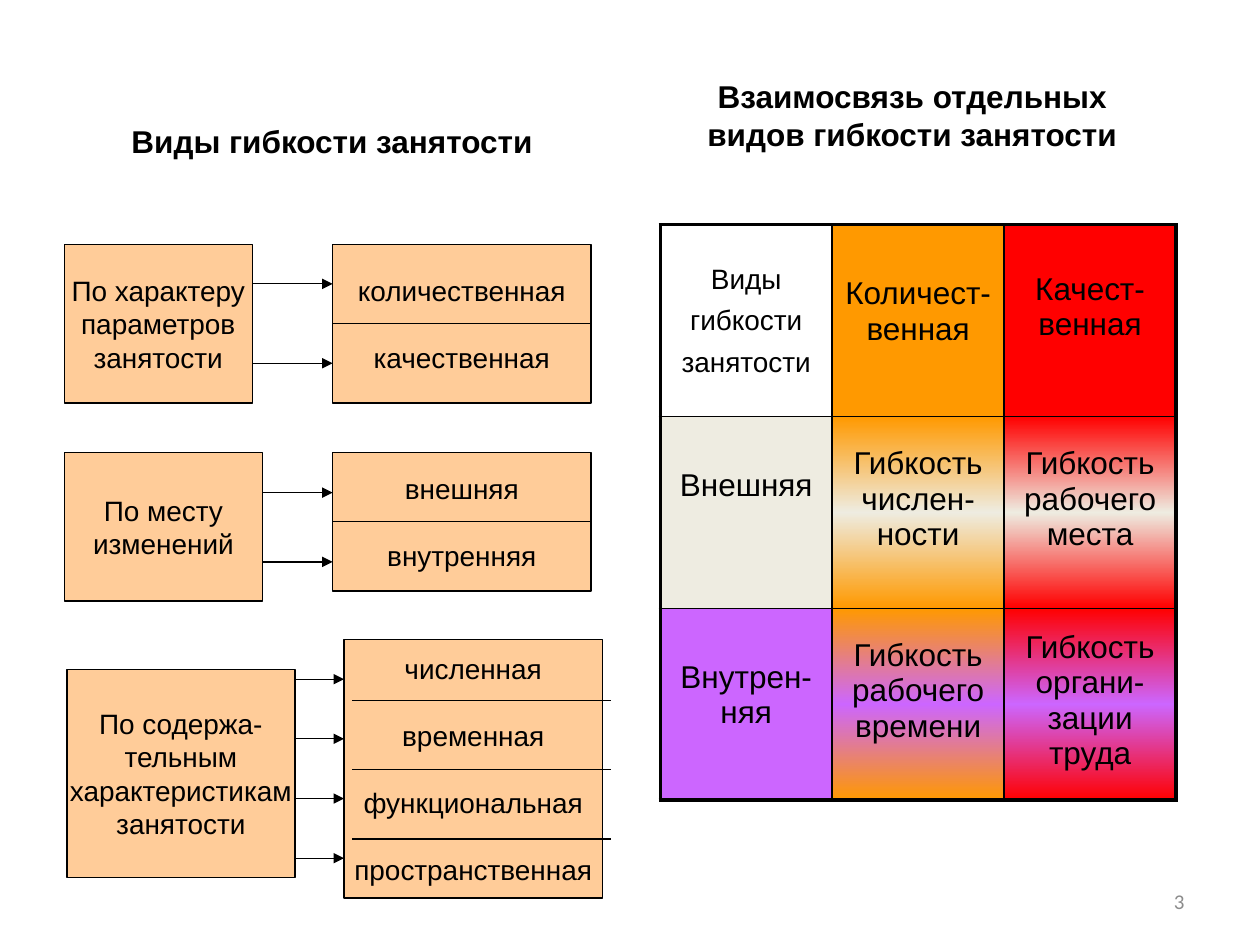
import copy

import pptx
import pptx.dml.color
import pptx.enum.shapes
import pptx.enum.text
import pptx.oxml
import pptx.oxml.ns
import pptx.util

Pt = pptx.util.Pt
RGBColor = pptx.dml.color.RGBColor
ALIGN = pptx.enum.text.PP_ALIGN
ANCHOR = pptx.enum.text.MSO_ANCHOR
qn = pptx.oxml.ns.qn

BLACK = RGBColor(0x00, 0x00, 0x00)
WHITE = RGBColor(0xFF, 0xFF, 0xFF)
GRAY = RGBColor(0x8C, 0x8C, 0x8C)
PEACH = RGBColor(0xFF, 0xCC, 0x99)
ORANGE = RGBColor(0xFF, 0x99, 0x00)
RED = RGBColor(0xFF, 0x00, 0x00)
CREAM = RGBColor(0xEE, 0xEC, 0xE1)
VIOLET = RGBColor(0xCC, 0x66, 0xFF)

BODY = {"size": Pt(16), "name": "Arial", "bold": False}
CELL = {"size": Pt(18), "name": "Arial", "bold": False}
HEADING = {"size": Pt(18), "name": "Arial", "bold": True}
NUMBER = {"size": Pt(12), "name": "Calibri", "bold": False}

LIST_WIDTH = 147.6


def write(tf, lines, font, color=BLACK, align=ALIGN.CENTER, gap=0):
    """Fill a text frame, one paragraph for each line."""
    for i, line in enumerate(lines):
        p = tf.add_paragraph() if i else tf.paragraphs[0]
        p.alignment = align
        p.space_before = Pt(gap if i else 0)
        r = p.add_run()
        r.text = line
        for key, value in font.items():
            setattr(r.font, key, value)
        r.font.color.rgb = color


def add_box(s, box, lines, font, fill=PEACH, line=BLACK, gap=0):
    sp = s.shapes.add_shape(pptx.enum.shapes.MSO_SHAPE.RECTANGLE, *map(Pt, box))
    sp.shadow.inherit = False
    sp.fill.solid()
    sp.fill.fore_color.rgb = fill
    sp.line.color.rgb = line
    sp.line.width = Pt(0.75)
    tf = sp.text_frame
    tf.word_wrap = False
    tf.vertical_anchor = ANCHOR.MIDDLE
    write(tf, lines, font, gap=gap)


def add_line(s, x1, x2, y, arrow=False):
    cn = s.shapes.add_connector(
        pptx.enum.shapes.MSO_CONNECTOR.STRAIGHT, Pt(x1), Pt(y), Pt(x2), Pt(y))
    cn.line.color.rgb = BLACK
    cn.line.width = Pt(0.75)
    if arrow:
        ln = cn.line._get_or_add_ln()
        ln.append(pptx.oxml.parse_xml(
            f'<a:tailEnd {pptx.oxml.ns.nsdecls("a")} type="triangle"/>'))
    cn._element.spPr.append(pptx.oxml.parse_xml(
        f'<a:effectLst {pptx.oxml.ns.nsdecls("a")}/>'))


def add_titles(s, title_box, heading_box):
    title = s.shapes.title
    title.left, title.top, title.width, title.height = map(Pt, title_box)
    title.text_frame.word_wrap = True
    title.text_frame.vertical_anchor = ANCHOR.MIDDLE
    write(title.text_frame, ["Взаимосвязь отдельных видов гибкости занятости"], HEADING)
    add_box(s, heading_box, ["Виды гибкости занятости"], HEADING, WHITE, WHITE)


def add_group(s, box, category, kinds, category_size, list_height,
              arrows, dividers, category_top=0, divider_shift=0):
    """Category on the left, its kinds on the right; arrows and dividers are (first, step)."""
    x, y, w, h = box
    category_w, category_h = category_size
    list_x = x + w - LIST_WIDTH
    add_box(s, (x, y + category_top, category_w, category_h), category, BODY)
    add_box(s, (list_x, y, LIST_WIDTH, list_height), kinds, BODY, gap=19)
    for i in range(len(kinds)):
        add_line(s, x + category_w, list_x, y + arrows[0] + i * arrows[1], arrow=True)
    for i in range(len(kinds) - 1):
        left = list_x + divider_shift
        add_line(s, left, left + LIST_WIDTH, y + dividers[0] + i * dividers[1])


def set_borders(cell, widths):
    tcPr = cell._tc.get_or_add_tcPr()
    for side, width in zip("LRTB", widths):
        tcPr.append(pptx.oxml.parse_xml(
            f'<a:ln{side} {pptx.oxml.ns.nsdecls("a")} w="{Pt(width)}">'
            f'<a:solidFill><a:srgbClr val="{BLACK}"/></a:solidFill></a:ln{side}>'))


def fill_cell(cell, edge, middle):
    """Solid fill, or a vertical gradient edge-middle-edge when the colours differ."""
    if edge == middle:
        cell.fill.solid()
        cell.fill.fore_color.rgb = edge
        return
    cell.fill.gradient()
    cell.fill.gradient_angle = 90
    stops = cell._tc.tcPr.find(qn("a:gradFill")).find(qn("a:gsLst"))
    stops.append(copy.deepcopy(stops[0]))
    for stop, color, position in zip(
            cell.fill.gradient_stops, (edge, middle, edge), (0, 0.5, 1)):
        stop.color.rgb = color
        stop.position = position


def add_matrix(s, box):
    # Each cell: lines, top margin
    rows = [
        [(["Виды", "гибкости", "занятости"], 22.5), (["Количест-венная"], 29.5),
         (["Качест-венная"], 27)],
        [(["Внешняя"], 29.5), (["Гибкость", "числен-ности"], 17),
         (["Гибкость", "рабочего", "места"], 17)],
        [(["Внутрен-няя"], 29.5), (["Гибкость", "рабочего", "времени"], 17),
         (["Гибкость", "органи-зации", "труда"], 12.5)],
    ]
    row_colors = [WHITE, CREAM, VIOLET]
    column_colors = [WHITE, ORANGE, RED]
    n = len(rows)
    table = s.shapes.add_table(n, n, *map(Pt, box)).table
    for i in range(n):
        table.columns[i].width = Pt(box[2] / n)
        table.rows[i].height = Pt(box[3] / n)
    for i, row in enumerate(rows):
        for j, (lines, top) in enumerate(row):
            cell = table.cell(i, j)
            cell.margin_left = cell.margin_right = Pt(3.6)
            cell.margin_top = Pt(top)
            corner = i == j == 0
            write(cell.text_frame, lines, BODY if corner else CELL, gap=6 if corner else 0)
            outer = (j == 0, j == n - 1, i == 0, i == n - 1)
            set_borders(cell, [2.25 if edge else 1 for edge in outer])
            # Headers are solid; inner cells blend the column and row colours
            edge = column_colors[j] if j else row_colors[i]
            middle = row_colors[i] if i else column_colors[j]
            fill_cell(cell, edge, middle)


def add_slide_number(s, box):
    tf = s.shapes.add_textbox(*map(Pt, box)).text_frame
    tf.word_wrap = True
    tf.vertical_anchor = ANCHOR.MIDDLE
    write(tf, ["3"], NUMBER, GRAY, ALIGN.RIGHT)


def main():
    prs = pptx.Presentation()
    prs.slide_width, prs.slide_height = Pt(720), Pt(540)
    s = prs.slides.add_slide(prs.slide_layouts[5])

    add_titles(s, (382.3, 25.9, 277.9, 79.2), (70.6, 54.7, 238.3, 51.1))

    # Classification of employment flexibility
    add_group(s, (36.7, 139.7, 301, 90.7),
              ["По характеру", "параметров", "занятости"],
              ["количественная", "качественная"],
              (107.5, 90.7), 90.7, arrows=(22.5, 45.4), dividers=(45.3, 0))
    add_group(s, (36.7, 258.5, 301, 85),
              ["По месту", "изменений"], ["внешняя", "внутренняя"],
              (113.4, 85), 79.2, arrows=(23, 39.6), dividers=(39.6, 0))
    add_group(s, (38.2, 365.5, 306, 147.6),
              ["По содержа-", "тельным", "характеристикам", "занятости"],
              ["численная", "временная", "функциональная", "пространственная"],
              (130.3, 118.8), 147.6, arrows=(22.6, 34.1), dividers=(34.8, 39.6),
              category_top=17, divider_shift=4.7)

    add_matrix(s, (377.3, 128.4, 294.8, 328.8))
    add_slide_number(s, (516.2, 500.4, 167.8, 28.8))
    prs.save("out.pptx")


if __name__ == "__main__":
    main()
